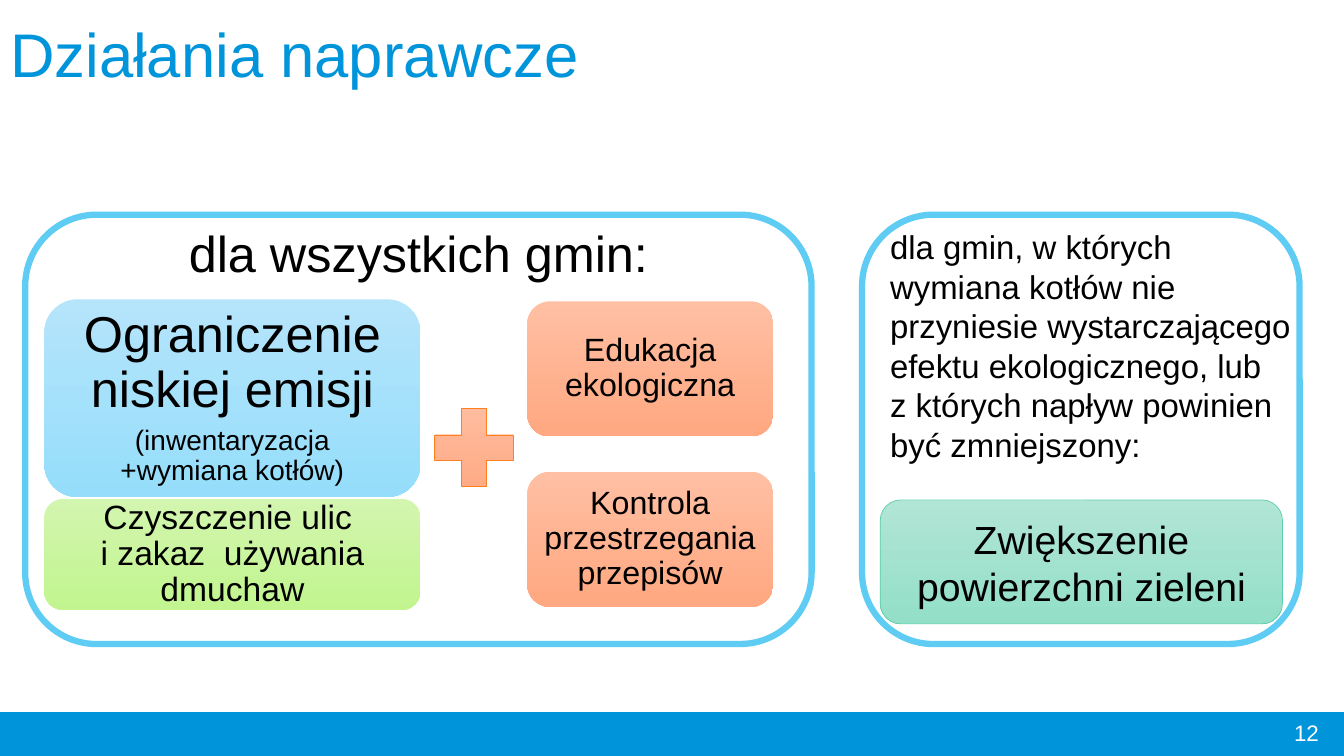
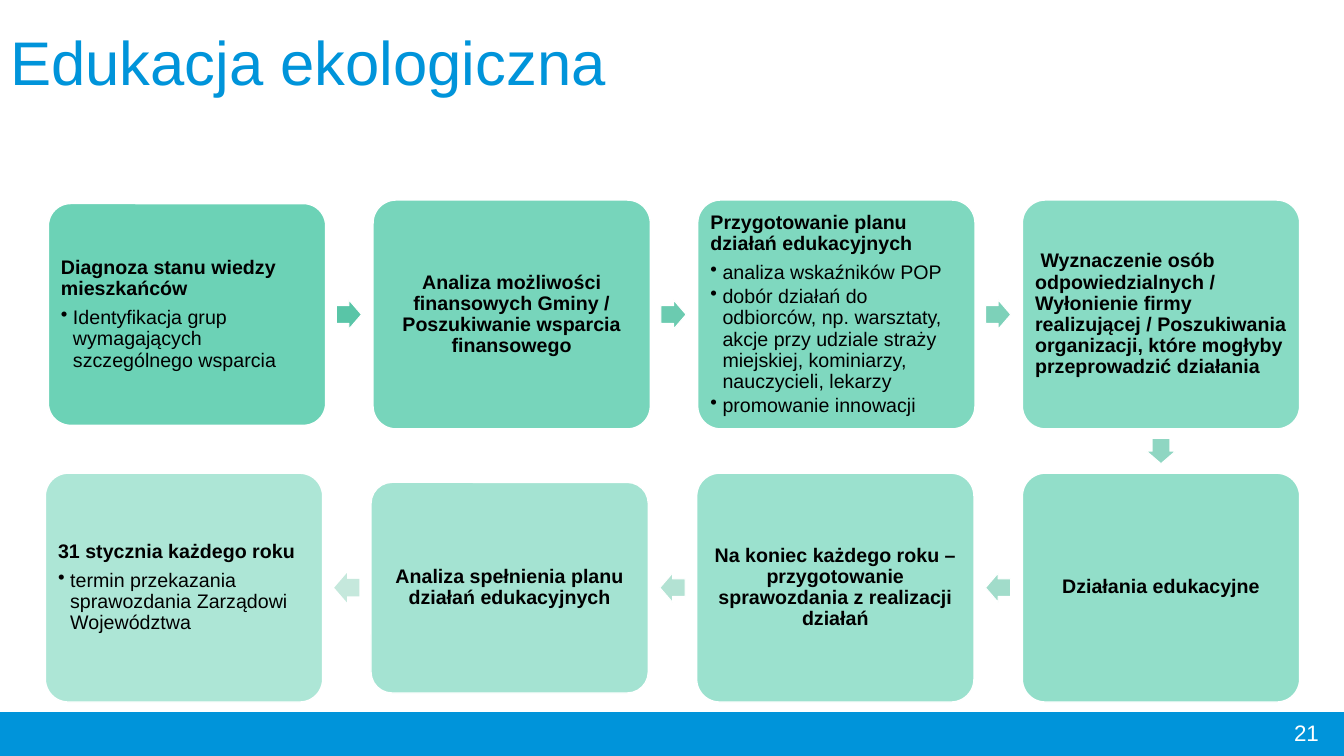
from dataclasses import dataclass

from lxml import etree
from pptx import Presentation
from pptx.dml.color import RGBColor as Rgb
from pptx.enum import shapes as es, text as et
from pptx.oxml import ns
from pptx.util import Inches, Pt

SHAPE, ALIGN, ANCHOR = es.MSO_SHAPE, et.PP_ALIGN, et.MSO_ANCHOR


@dataclass(frozen=True)
class Theme:
    font: str = "Arial"
    blue: str = "0094DA"
    frame: str = "5ECCF3"
    green: str = "5DCEAF"
    white: str = "FFFFFF"
    black: str = "000000"
    orange: str = "FF8021"
    peach: tuple = ("FFBFA3", "FFA881")
    sky: tuple = ("B5E5FB", "95DDFB")
    lime: tuple = ("D2F5AF", "C2F58F")
    mint: tuple = ("B1E5D5", "93DFC7")
    arrows: tuple = ("59C5A7", "C5E8DC")
    title: float = 44
    head: float = 36
    goal: float = 28
    street: float = 24
    intro: float = 23.5
    tile: float = 23
    note: float = 20
    page: float = 16
    step: float = 14


T = Theme()

# Content: slide 1
PANELS = [(8.55, 2.13, 4.34, 4.26), (0.25, 2.13, 7.8, 4.26)]
# box, fill, inset, paragraphs with their sizes
TILES = [
    ((5.23, 2.99, 2.44, 1.34), T.peach, 0.1, [("Edukacja ekologiczna", T.tile)]),
    ((5.23, 4.68, 2.44, 1.34), T.peach, 0.1,
     [("Kontrola przestrzegania przepisów", T.tile)]),
    ((0.44, 2.97, 3.73, 1.96), T.sky, 0.15,
     [("Ograniczenie niskiej emisji", T.head),
      ("(inwentaryzacja\n+wymiana kotłów)", T.note)]),
    ((0.44, 4.95, 3.73, 1.1), T.lime, 0.1,
     [("Czyszczenie ulic \ni zakaz  używania dmuchaw", T.street)]),
]
INTRO = [
    "dla gmin, w których wymiana kotłów nie przyniesie wystarczającego "
    "efektu ekologicznego, lub",
    "z których napływ powinien być zmniejszony:",
]

# Content: slide 2, in reading order: height, alignment, anchor, heading, bullets
LEFT, MID = ALIGN.LEFT, ALIGN.CENTER
STEPS = [
    (2.2, LEFT, ANCHOR.MIDDLE, "Diagnoza stanu wiedzy mieszkańców",
     ["Identyfikacja grup wymagających szczególnego wsparcia"]),
    (2.27, MID, ANCHOR.MIDDLE,
     "Analiza możliwości finansowych Gminy / Poszukiwanie wsparcia finansowego", []),
    (2.27, LEFT, ANCHOR.TOP, "Przygotowanie planu działań edukacyjnych",
     ["analiza wskaźników POP",
      "dobór działań do odbiorców, np. warsztaty, akcje przy udziale straży "
      "miejskiej, kominiarzy, nauczycieli, lekarzy",
      "promowanie innowacji"]),
    (2.27, LEFT, ANCHOR.MIDDLE,
     " Wyznaczenie osób odpowiedzialnych / \nWyłonienie firmy realizującej / "
     "Poszukiwania organizacji, które mogłyby przeprowadzić działania", []),
    (2.27, MID, ANCHOR.MIDDLE, "Działania edukacyjne", []),
    (2.27, MID, ANCHOR.MIDDLE,
     "Na koniec każdego roku – przygotowanie sprawozdania z realizacji działań", []),
    (2.09, MID, ANCHOR.MIDDLE, "Analiza spełnienia planu działań edukacyjnych", []),
    (2.27, LEFT, ANCHOR.MIDDLE, "31 stycznia każdego roku",
     ["termin przekazania sprawozdania Zarządowi Województwa"]),
]
# left of the first column, column pitch, vertical centre
ROWS = [(0.48, 3.22, 3.12), (0.45, 3.23, 5.83)]
COLS = 4


# Helpers
def place(box):
    return [Inches(n) for n in box]


def shape(slide, kind, box, fill, line=None, width=1):
    item = slide.shapes.add_shape(kind, *place(box))
    item.shadow.inherit = False
    if isinstance(fill, tuple):
        item.fill.gradient()
        item.fill.gradient_angle = 270
        for stop, tint in zip(item.fill.gradient_stops, fill):
            stop.color.rgb = Rgb.from_string(tint)
    else:
        item.fill.solid()
        item.fill.fore_color.rgb = Rgb.from_string(fill)
    if line:
        item.line.color.rgb = Rgb.from_string(line)
        item.line.width = Pt(width)
    else:
        item.line.fill.background()
    return item


def fade(item, share):
    color = item.fill._xPr.find(".//" + ns.qn("a:srgbClr"))
    etree.SubElement(color, ns.qn("a:alpha"), val=str(round(share * 1000)))


def setup(frame, anchor=ANCHOR.TOP, inset=None):
    frame.word_wrap = True
    frame.auto_size = et.MSO_AUTO_SIZE.NONE
    frame.vertical_anchor = anchor
    if inset is not None:
        frame.margin_left = frame.margin_right = Inches(inset)
        frame.margin_top = frame.margin_bottom = Inches(inset)


def write(frame, text, size, align=LEFT, color=T.black, bold=False,
          pitch=1.0, after=0, bullet=False):
    para = frame.paragraphs[0]
    if para.runs:
        para = frame.add_paragraph()
    para.alignment = align
    para.line_spacing = pitch
    para.space_after = Pt(after)
    if bullet:
        para.level = 1
        props = para._p.get_or_add_pPr()
        props.set("marL", str(Inches(0.12)))
        props.set("indent", str(Inches(-0.12)))
        etree.SubElement(props, ns.qn("a:buChar"), char="•")
    for i, part in enumerate(text.split("\n")):
        if i:
            para.add_line_break()
        run = para.add_run()
        run.text = part
        run.font.name, run.font.size, run.font.bold = T.font, Pt(size), bold
        run.font.color.rgb = Rgb.from_string(color)


def label(slide, box, anchor=ANCHOR.TOP):
    frame = slide.shapes.add_textbox(*place(box)).text_frame
    setup(frame, anchor)
    return frame


def start(deck, title, box, page):
    slide = deck.slides.add_slide(deck.slide_layouts[5])
    head = slide.shapes.title
    head.left, head.top, head.width, head.height = place(box)
    setup(head.text_frame)
    write(head.text_frame, title, T.title, color=T.blue, pitch=0.9)
    foot = label(slide, (10.18, 7.07, 3, 0.4), ANCHOR.MIDDLE)
    write(foot, page, T.page, ALIGN.RIGHT, T.white)
    return slide


def add_band(deck, slide):
    """Move the bottom band to the master, behind everything."""
    band = shape(slide, SHAPE.RECTANGLE, (0, 7.07, 13.33, 0.43), T.blue, T.blue)
    node = band._element
    node.nvSpPr.cNvPr.set("id", "20")
    deck.slide_master.shapes._spTree.insert(2, node)


def blend(ends, share):
    first, last = (Rgb.from_string(c) for c in ends)
    return str(Rgb(*(round(a + (b - a) * share) for a, b in zip(first, last))))


# Slide 1: measures
def draw_plan(slide):
    for box in PANELS:
        shape(slide, SHAPE.ROUNDED_RECTANGLE, box, T.white, T.frame, 4.5)
    head = label(slide, (0.44, 2.15, 7.42, 0.71))
    write(head, "dla wszystkich gmin:", T.head, MID)
    shape(slide, SHAPE.MATH_PLUS, (4.17, 3.91, 1.06, 1.06), T.peach, T.orange, 0.5)
    for box, fill, inset, paras in TILES:
        frame = shape(slide, SHAPE.ROUNDED_RECTANGLE, box, fill).text_frame
        setup(frame, ANCHOR.MIDDLE, inset)
        for text, size in paras:
            write(frame, text, size, MID, pitch=0.9, after=6)
    goal = shape(slide, SHAPE.ROUNDED_RECTANGLE, (8.73, 4.96, 3.99, 1.23),
                 T.mint, T.green, 0.5).text_frame
    setup(goal, ANCHOR.MIDDLE)
    write(goal, "Zwiększenie powierzchni zieleni", T.goal, MID)
    intro = label(slide, (8.73, 2.2, 4.26, 2.47))
    for text in INTRO:
        write(intro, text, T.intro)


# Slide 2: process that runs right, down, then back left
def draw_steps(slide):
    wide, last = 2.75, len(STEPS) - 1
    for i, (high, align, anchor, head, points) in enumerate(STEPS):
        row, col = divmod(i, COLS)
        if row:
            col = COLS - 1 - col
        left, pitch, mid = ROWS[row]
        x = left + pitch * col
        box = shape(slide, SHAPE.ROUNDED_RECTANGLE,
                    (x, mid - high / 2, wide, high), T.green, T.white)
        box.adjustments[0] = 0.1
        fade(box, 90 - 40 * i / last)
        setup(box.text_frame, anchor, 0.06)
        write(box.text_frame, head, T.step, align, bold=True, pitch=0.9, after=5.5)
        for text in points:
            write(box.text_frame, text, T.step, pitch=0.9, after=2, bullet=True)

        # Arrow to the next step
        if i == last:
            continue
        if i == COLS - 1:
            cx, cy, turn = x + wide / 2, (ROWS[0][2] + ROWS[1][2]) / 2, 90
        elif row:
            cx, cy, turn = x - 0.24, mid, 180
        else:
            cx, cy, turn = x + pitch - 0.24, mid, 0
        line = T.white if i < last - 1 else None
        arrow = shape(slide, SHAPE.RIGHT_ARROW, (cx - 0.125, cy - 0.145, 0.25, 0.29),
                      blend(T.arrows, i / (last - 1)), line, 0.75)
        arrow.adjustments[0], arrow.adjustments[1] = 0.6, 0.5
        arrow.rotation = turn


def main():
    deck = Presentation()
    deck.slide_width, deck.slide_height = Inches(13.33), Inches(7.5)
    plan = start(deck, "Działania naprawcze", (0, 0.19, 6.13, 0.79), "12")
    add_band(deck, plan)
    draw_plan(plan)
    steps = start(deck, "Edukacja ekologiczna", (0, 0.27, 6.43, 0.85), "21")
    draw_steps(steps)
    deck.save("out.pptx")


if __name__ == "__main__":
    main()
